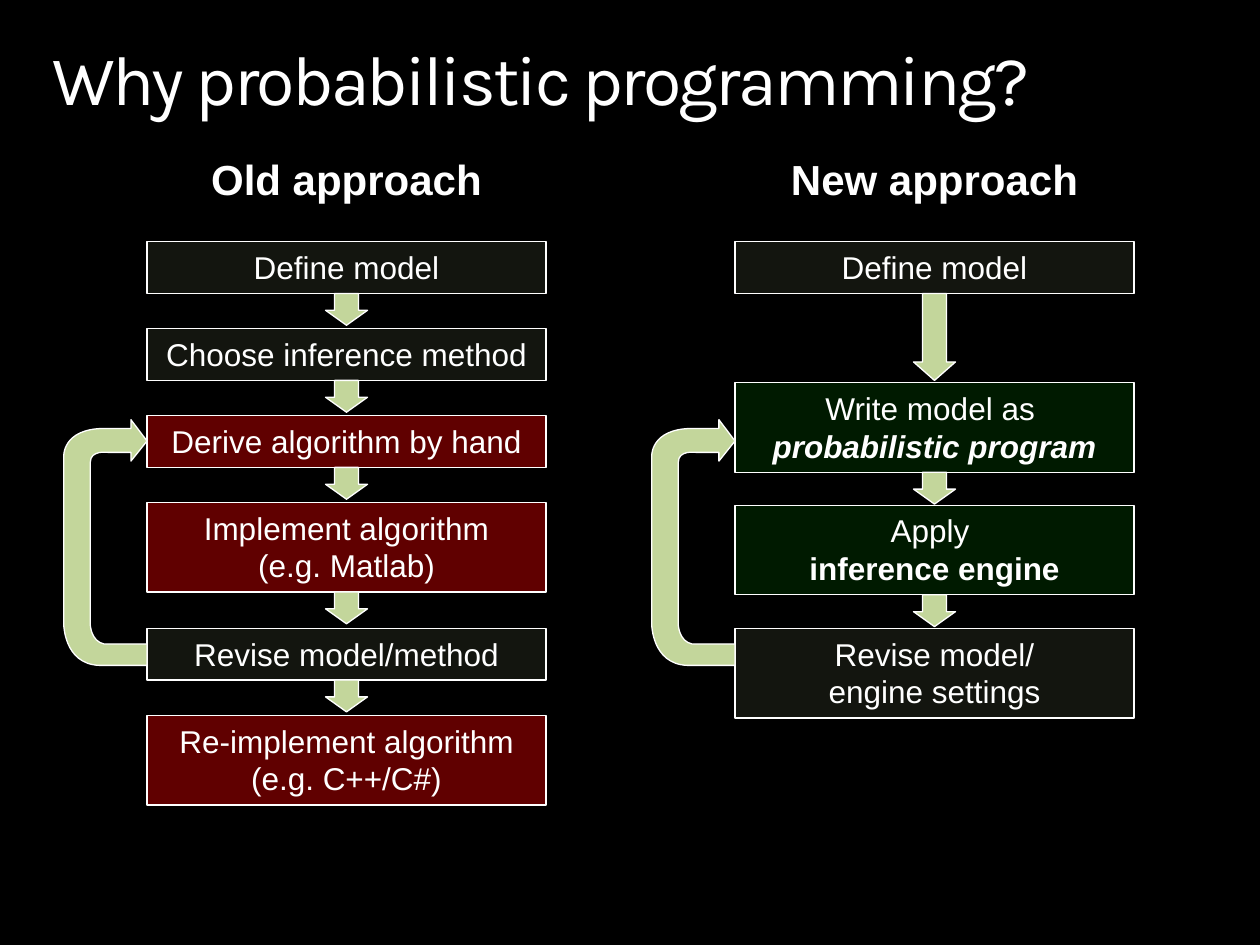
from lxml import etree
from pptx import Presentation
from pptx.dml.color import RGBColor
from pptx.enum.shapes import MSO_SHAPE
from pptx.enum.text import MSO_ANCHOR, MSO_AUTO_SIZE, PP_ALIGN
from pptx.oxml.ns import qn
from pptx.util import Pt

RECT, DOWN = MSO_SHAPE.RECTANGLE, MSO_SHAPE.DOWN_ARROW
TOP = MSO_ANCHOR.TOP
LEFT, CENTER = PP_ALIGN.LEFT, PP_ALIGN.CENTER
NO_FIT = MSO_AUTO_SIZE.NONE

COLORS = {"black": "000000", "white": "FFFFFF", "sage": "C3D69B",
          "red": "C00000", "green": "00FF00"}
OPACITY = {"sage": 10, "red": 50, "green": 10}

BOX_W, ONE_LINE, TWO_LINES = 228, 29.5, 51.2
ARROW_W, SHORT, LONG = 24, 18.2, 49.7

LOOP_START = (0, 368)
LOOP = [
    [(-24.5, 368)],
    [(-32, 366.5), (-32.4, 357), (-32.4, 357)],
    [(-32.4, 264.2)],
    [(-32.4, 257), (-22.5, 258.5), (-22.5, 258.5)],
    [(-9.2, 258.5)], [(-9.2, 263.5)], [(0, 252)], [(-9.2, 239.8)],
    [(-9.2, 244.8)], [(-24, 244.8)],
    [(-49, 244.8), (-47.6, 261.4), (-47.6, 261.4)],
    [(-47.6, 356.4)],
    [(-47.6, 356.4), (-47.6, 379.4), (-27.4, 380.2)],
    [(0, 380.2)],
]

COLUMNS = [
    (84, "Old approach", [
        (138.2, ONE_LINE, "sage", ["Define model"], SHORT),
        (187.9, ONE_LINE, "sage", ["Choose inference method"], SHORT),
        (237.6, ONE_LINE, "red", ["Derive algorithm by hand"], SHORT),
        (287.1, TWO_LINES, "red", ["Implement algorithm", "(e.g. Matlab)"], SHORT),
        (359.1, ONE_LINE, "sage", ["Revise model/method"], SHORT),
        (408.8, TWO_LINES, "red", ["Re-implement algorithm", "(e.g. C++/C#)"], 0),
    ]),
    (420, "New approach", [
        (138.2, ONE_LINE, "sage", ["Define model"], LONG),
        (218.7, TWO_LINES, "green", ["Write model as ", "probabilistic program"], SHORT),
        (288.7, TWO_LINES, "green", ["Apply ", "inference engine"], SHORT),
        (359.1, TWO_LINES, "sage", ["Revise model/", "engine settings"], 0),
    ]),
]
EMPHASIS = {"probabilistic program": (True, True), "inference engine": (True, None)}


class Deck:
    font = "Arial"
    title_font = "Karla"

    def __init__(self, slide):
        self.s = slide
        fill = slide.background.fill
        fill.solid()
        fill.fore_color.rgb = self.rgb("black")

    def rgb(self, name):
        return RGBColor.from_string(COLORS[name])

    def paint(self, sp, color, opacity=100):
        sp.shadow.inherit = False
        sp.fill.solid()
        sp.fill.fore_color.rgb = self.rgb(color)
        sp.line.color.rgb = self.rgb("white")
        sp.line.width = Pt(0.75)
        if opacity < 100:
            clr = sp.fill._xPr.find(qn("a:solidFill"))[0]
            etree.SubElement(clr, qn("a:alpha"), val=str(opacity * 1000))

    def style(self, p, size, font, align):
        p.alignment = align
        p.font.size = Pt(size)
        p.font.name = font
        p.font.color.rgb = self.rgb("white")

    def title(self, text):
        sp = self.s.shapes.title
        sp.left, sp.top, sp.width, sp.height = Pt(30), Pt(25.6), Pt(660), Pt(44)
        tf = sp.text_frame
        tf.margin_left = tf.margin_top = tf.margin_right = tf.margin_bottom = 0
        tf.vertical_anchor = TOP
        tf.auto_size = NO_FIT
        p = tf.paragraphs[0]
        r = p.add_run()
        r.text = text
        r.font._element.set("spc", "-150")
        p.line_spacing = 0.9
        self.style(p, 40, self.title_font, LEFT)

    def heading(self, x, text):
        width = 184
        sp = self.s.shapes.add_textbox(
            Pt(x + (BOX_W - width) / 2), Pt(84.4), Pt(width), Pt(36))
        tf = sp.text_frame
        tf.word_wrap = True
        p = tf.paragraphs[0]
        p.text = text
        self.style(p, 24, self.font, CENTER)
        p.font.bold = True

    def box(self, x, y, height, color, lines):
        sp = self.s.shapes.add_shape(RECT, Pt(x), Pt(y), Pt(BOX_W), Pt(height))
        self.paint(sp, color, OPACITY[color])
        tf = sp.text_frame
        tf.word_wrap = True
        tf.vertical_anchor = TOP
        p = tf.paragraphs[0]
        for i, line in enumerate(lines):
            if i:
                p.add_line_break()
            r = p.add_run()
            r.text = line
            r.font.bold, r.font.italic = EMPHASIS.get(line, (None, None))
        self.style(p, 18, self.font, CENTER)

    def arrow(self, x, y, height):
        sp = self.s.shapes.add_shape(
            DOWN, Pt(x + (BOX_W - ARROW_W) / 2), Pt(y), Pt(ARROW_W), Pt(height))
        sp.adjustments[0] = 0.57
        sp.adjustments[1] = 0.47 if height == SHORT else 0.44
        self.paint(sp, "sage")

    def loop(self, x):
        points = [(Pt(x + dx), Pt(y)) for segment in LOOP for dx, y in segment]
        builder = self.s.shapes.build_freeform(Pt(x + LOOP_START[0]), Pt(LOOP_START[1]))
        builder.add_line_segments(points, close=True)
        sp = builder.convert_to_shape()
        lines = iter(list(sp._element.iter(qn("a:lnTo"))))
        for segment in LOOP:
            first, *others = [next(lines) for _ in segment]
            if others:
                first.tag = qn("a:cubicBezTo")
                for line in others:
                    first.append(line[0])
                    line.getparent().remove(line)
        self.paint(sp, "sage")


def main():
    prs = Presentation()
    prs.slide_width, prs.slide_height = Pt(720), Pt(540)
    deck = Deck(prs.slides.add_slide(prs.slide_layouts[5]))
    deck.title("Why probabilistic programming?")
    for x, heading, steps in COLUMNS:
        deck.heading(x, heading)
        for y, height, color, lines, arrow in steps:
            deck.box(x, y, height, color, lines)
            if arrow:
                deck.arrow(x, y + height, arrow)
        deck.loop(x)
    prs.save("out.pptx")


if __name__ == "__main__":
    main()
